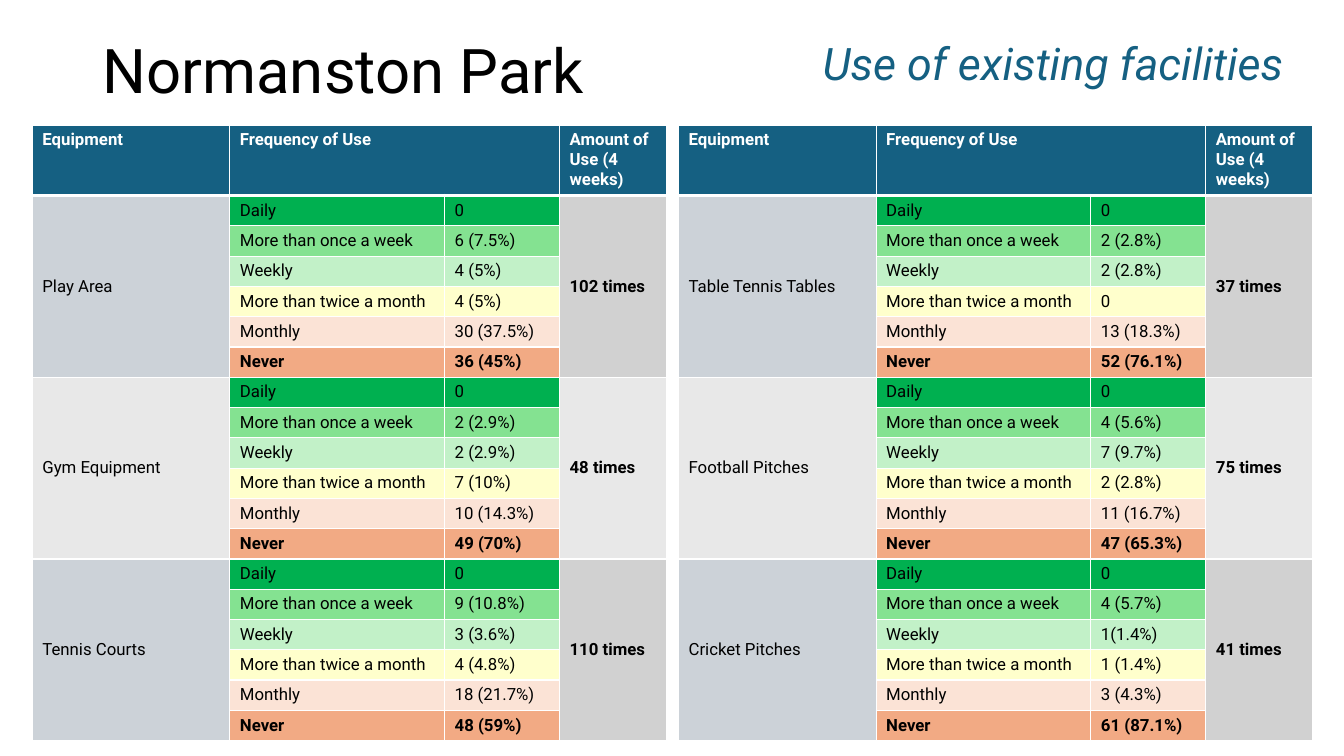
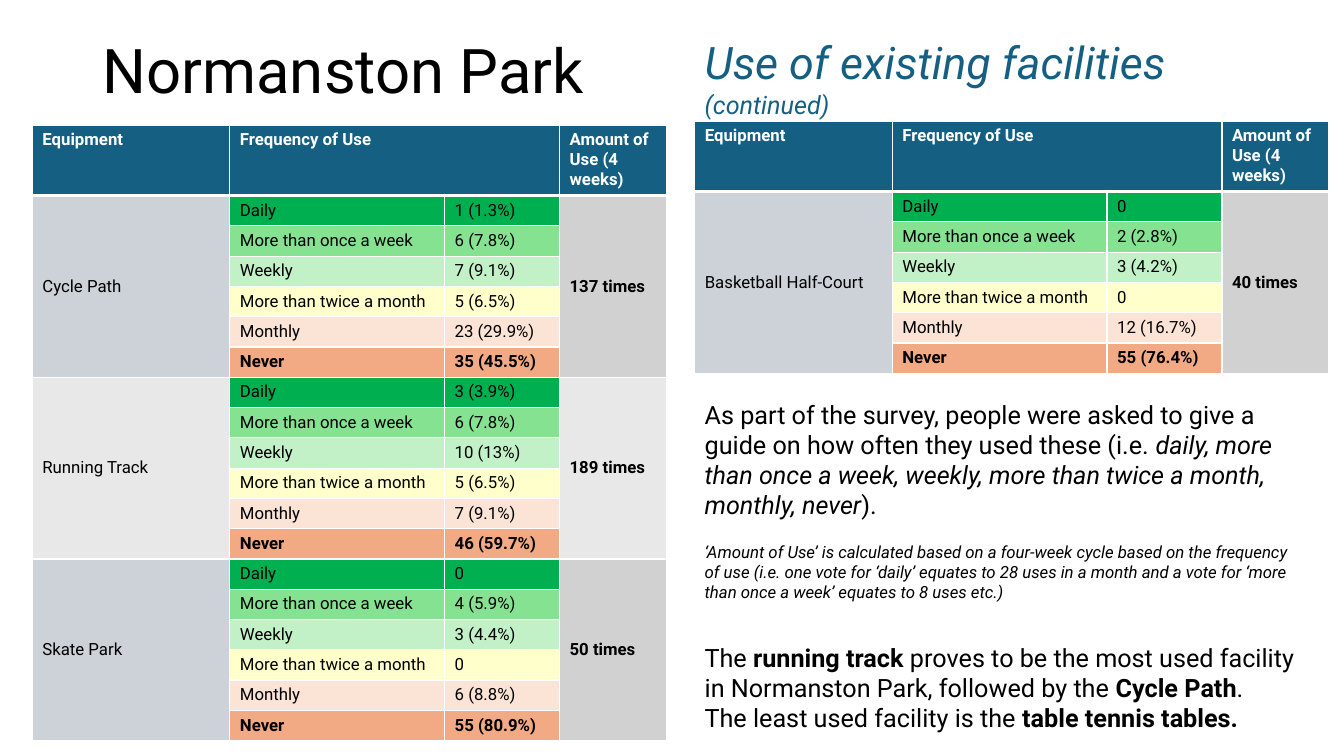
from lxml.etree import SubElement
from pptx import Presentation
from pptx.dml.color import RGBColor
from pptx.enum.text import MSO_ANCHOR
from pptx.oxml.ns import qn
from pptx.util import Inches, Pt

# Shared colours and styles
BLUE = RGBColor(0x15, 0x60, 0x82)
WHITE = RGBColor(0xFF, 0xFF, 0xFF)
BLACK = RGBColor(0x00, 0x00, 0x00)
BLUE_GREY = RGBColor(0xCC, 0xD2, 0xD8)
MID_GREY = RGBColor(0xD1, 0xD1, 0xD1)
LIGHT_GREY = RGBColor(0xE8, 0xE8, 0xE8)

FREQUENCIES = [
    ("Daily", RGBColor(0x00, 0xB0, 0x50)),
    ("More than once a week", RGBColor(0x84, 0xE2, 0x91)),
    ("Weekly", RGBColor(0xC2, 0xF1, 0xC8)),
    ("More than twice a month", RGBColor(0xFF, 0xFF, 0xCC)),
    ("Monthly", RGBColor(0xFB, 0xE3, 0xD6)),
    ("Never", RGBColor(0xF2, 0xAA, 0x84)),
]
GROUP_FILLS = [(BLUE_GREY, MID_GREY), (LIGHT_GREY, LIGHT_GREY)]
HEADERS = ["Equipment", "Frequency of Use", "", "Amount of Use (4 weeks)"]
COL_WIDTHS = [1.96, 2.13, 1.14, 1.06]
HEADER_HEIGHT, ROW_HEIGHT = 0.7, 0.3

TITLE = {"size": Pt(44)}
SUBTITLE = {"size": Pt(32), "italic": True, "color": BLUE}
CONTINUED = {**SUBTITLE, "size": Pt(18)}
BODY = {"size": Pt(18)}
BODY_ITALIC = {**BODY, "italic": True}
BODY_BOLD = {**BODY, "bold": True}
NOTE = {"size": Pt(12), "italic": True}
CELL = {"size": Pt(12), "bold": False}
CELL_BOLD = {**CELL, "bold": True}
CELL_HEADER = {**CELL_BOLD, "color": WHITE}

# Slide content: tables as (left, top, groups), texts as (box, paragraphs)
SLIDES = [
    {
        "tables": [
            (0.32, 1.24, [
                ("Play Area", "102 times",
                 ["0", "6 (7.5%)", "4 (5%)", "4 (5%)", "30 (37.5%)", "36 (45%)"]),
                ("Gym Equipment", "48 times",
                 ["0", "2 (2.9%)", "2 (2.9%)", "7 (10%)", "10 (14.3%)", "49 (70%)"]),
                ("Tennis Courts", "110 times",
                 ["0", "9 (10.8%)", "3 (3.6%)", "4 (4.8%)", "18 (21.7%)", "48 (59%)"]),
            ]),
            (6.73, 1.24, [
                ("Table Tennis Tables", "37 times",
                 ["0", "2 (2.8%)", "2 (2.8%)", "0", "13 (18.3%)", "52 (76.1%)"]),
                ("Football Pitches", "75 times",
                 ["0", "4 (5.6%)", "7 (9.7%)", "2 (2.8%)", "11 (16.7%)", "47 (65.3%)"]),
                ("Cricket Pitches", "41 times",
                 ["0", "4 (5.7%)", "1(1.4%)", "1 (1.4%)", "3 (4.3%)", "61 (87.1%)"]),
            ]),
        ],
        "texts": [
            ((8.06, 0.31, 5.2, 0.64), [[("Use of existing facilities", SUBTITLE)]]),
        ],
    },
    {
        "tables": [
            (0.32, 1.24, [
                ("Cycle Path", "137 times",
                 ["1 (1.3%)", "6 (7.8%)", "7 (9.1%)", "5 (6.5%)", "23 (29.9%)", "35 (45.5%)"]),
                ("Running Track", "189 times",
                 ["3 (3.9%)", "6 (7.8%)", "10 (13%)", "5 (6.5%)", "7 (9.1%)", "46 (59.7%)"]),
                ("Skate Park", "50 times",
                 ["0", "4 (5.9%)", "3 (4.4%)", "0", "6 (8.8%)", "55 (80.9%)"]),
            ]),
            (6.89, 1.2, [
                ("Basketball Half-Court", "40 times",
                 ["0", "2 (2.8%)", "3 (4.2%)", "0", "12 (16.7%)", "55 (76.4%)"]),
            ]),
        ],
        "texts": [
            ((6.89, 0.3, 6.12, 0.64), [
                [("Use of existing facilities ", SUBTITLE), ("(continued)", CONTINUED)],
            ]),
            ((6.89, 3.91, 6.12, 1.3), [
                [("As part of the survey, people were asked to give a guide on how often "
                  "they used these (i.e. ", BODY),
                 ("daily, more than once a week, weekly, more than twice a month, "
                  "monthly, never", BODY_ITALIC),
                 (").", BODY)],
            ]),
            ((6.89, 5.32, 6.12, 0.71), [
                [("‘Amount of Use’ is calculated based on a four-week cycle based on the "
                  "frequency of use (i.e. one vote for ‘daily’ equates to 28 uses in a month "
                  "and a vote for ‘more than once a week’ equates to 8 uses etc.)", NOTE)],
            ]),
            ((6.89, 6.32, 6.12, 1.02), [
                [("The ", BODY), ("running track ", BODY_BOLD),
                 ("proves to be the most used facility in Normanston Park, followed by the ",
                  BODY),
                 ("Cycle Path", BODY_BOLD), (".", BODY)],
                [("The least used facility is the ", BODY),
                 ("table tennis tables.", BODY_BOLD)],
            ]),
        ],
    },
]


def add_runs(p, runs):
    for text, style in runs:
        r = p.add_run()
        r.text = text
        r.font.name = "Roboto"
        for key, value in {"color": BLACK, **style}.items():
            if key == "color":
                r.font.color.rgb = value
            else:
                setattr(r.font, key, value)


def fill_cell(cell, text, style, color, top=1, bottom=1):
    # White borders go before the fill in the cell properties
    tcPr = cell._tc.get_or_add_tcPr()
    for side, width in {"L": 1, "R": 1, "T": top, "B": bottom}.items():
        ln = SubElement(tcPr, qn(f"a:ln{side}"), w=str(Pt(width)))
        SubElement(SubElement(ln, qn("a:solidFill")), qn("a:srgbClr"), val=str(WHITE))
    cell.fill.solid()
    cell.fill.fore_color.rgb = color
    if text:
        add_runs(cell.text_frame.paragraphs[0], [(text, style)])


prs = Presentation()
prs.slide_width, prs.slide_height = Inches(13.33), Inches(7.5)

for content in SLIDES:
    s = prs.slides.add_slide(prs.slide_layouts[6])

    # Title
    tf = s.shapes.add_textbox(Inches(0.92), Inches(0), Inches(11.5), Inches(1.45)).text_frame
    tf.word_wrap = True
    tf.vertical_anchor = MSO_ANCHOR.MIDDLE
    tf.paragraphs[0].line_spacing = 0.9
    add_runs(tf.paragraphs[0], [("Normanston Park", TITLE)])

    # Subtitle and commentary
    for box, paragraphs in content["texts"]:
        tf = s.shapes.add_textbox(*map(Inches, box)).text_frame
        tf.word_wrap = True
        for i, runs in enumerate(paragraphs):
            add_runs(tf.add_paragraph() if i else tf.paragraphs[0], runs)

    # Usage tables
    for left, top, groups in content["tables"]:
        steps = len(FREQUENCIES)
        rows = 1 + steps * len(groups)
        height = HEADER_HEIGHT + ROW_HEIGHT * (rows - 1)
        table = s.shapes.add_table(rows, len(COL_WIDTHS), Inches(left), Inches(top),
                                   Inches(sum(COL_WIDTHS)), Inches(height)).table
        table.horz_banding = False
        for col, width in zip(table.columns, COL_WIDTHS):
            col.width = Inches(width)
        for i, row in enumerate(table.rows):
            row.height = Inches(ROW_HEIGHT if i else HEADER_HEIGHT)

        for col, text in enumerate(HEADERS):
            fill_cell(table.cell(0, col), text, CELL_HEADER, BLUE, bottom=3)
        table.cell(0, 1).merge(table.cell(0, 2))

        for g, (equipment, amount, counts) in enumerate(groups):
            first = 1 + g * steps
            name_fill, amount_fill = GROUP_FILLS[g % 2]
            for i, ((frequency, color), count) in enumerate(zip(FREQUENCIES, counts)):
                style = CELL_BOLD if frequency == "Never" else CELL
                values = [
                    ("" if i else equipment, CELL, name_fill),
                    (frequency, style, color),
                    (count, style, color),
                    ("" if i else amount, CELL_BOLD, amount_fill),
                ]
                for col, value in enumerate(values):
                    fill_cell(table.cell(first + i, col), *value,
                              top=3 if first + i == 1 else 1)
            for col in (0, 3):
                cell = table.cell(first, col)
                cell.merge(table.cell(first + steps - 1, col))
                cell.vertical_anchor = MSO_ANCHOR.MIDDLE

prs.save("out.pptx")
